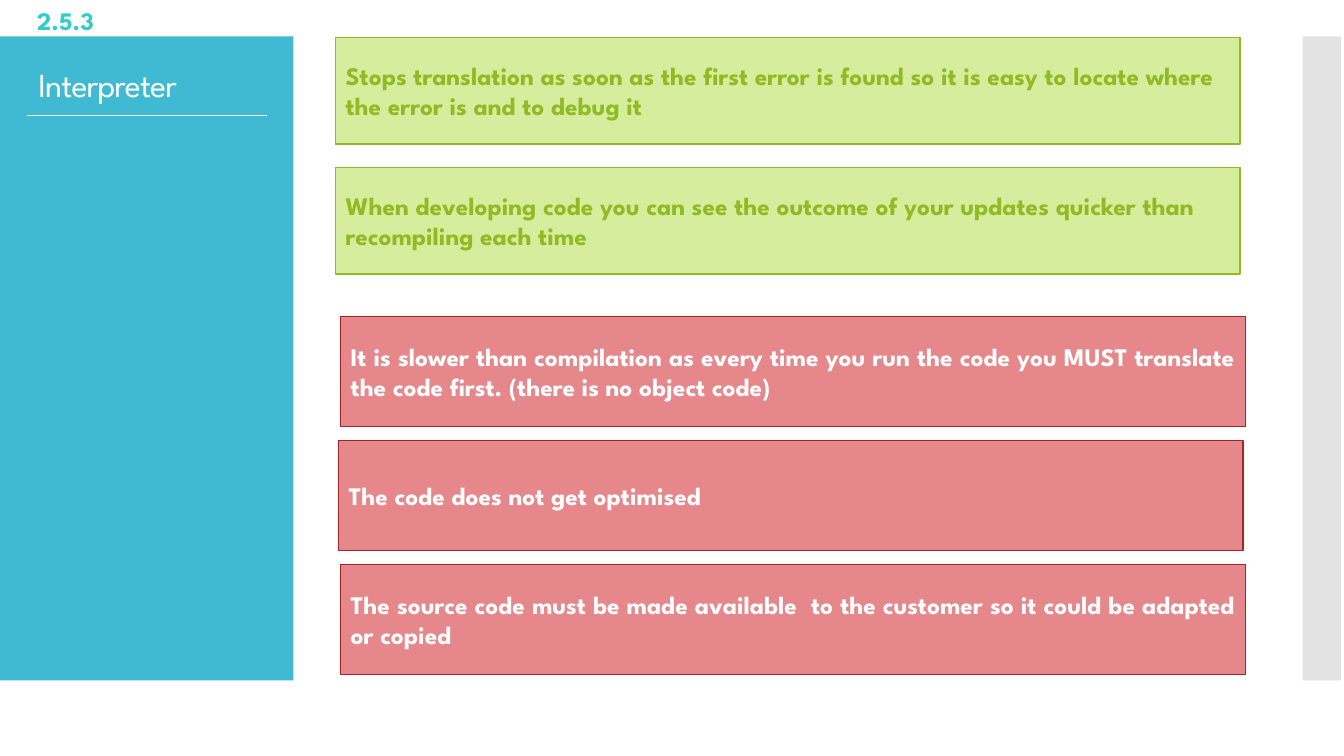
from dataclasses import dataclass

from lxml.etree import SubElement
from pptx import Presentation
from pptx.dml.color import RGBColor
from pptx.enum.shapes import MSO_CONNECTOR as Connector, MSO_SHAPE as Shape
from pptx.enum.text import MSO_ANCHOR as Anchor, MSO_AUTO_SIZE as AutoSize, PP_ALIGN as Align
from pptx.oxml.ns import qn
from pptx.util import Inches, Pt


@dataclass(frozen=True)
class Theme:
    font: str = "League Spartan"
    title_size: float = 24
    body_size: float = 18
    white: str = "FFFFFF"
    sidebar: str = "40BAD2"
    edge: str = "C8C8C8"
    number: str = "33CCCC"
    pro_fill: str = "D7ED9E"
    pro_line: str = "90BB23"
    con_fill: str = "E6888B"
    con_line: str = "A72327"


THEME = Theme()


def color(code):
    return RGBColor.from_string(code)


def write(frame, text, *, size=THEME.body_size, ink=THEME.white, bold=True,
          align=Align.LEFT, anchor=Anchor.TOP, after=0, leading=1.0, tracking=None):
    """Fill a text frame with one formatted paragraph."""
    frame.word_wrap = True
    frame.vertical_anchor = anchor
    para = frame.paragraphs[0]
    para.alignment = align
    para.space_after = Pt(after)
    para.line_spacing = leading
    span = para.add_run()
    span.text = text
    span.font.name = THEME.font
    span.font.size = Pt(size)
    span.font.bold = bold
    span.font.color.rgb = color(ink)
    if tracking is not None:
        span._r.get_or_add_rPr().set("spc", str(round(tracking * 100)))


class SlideBuilder:
    def __init__(self, page, theme):
        self.page = page
        self.theme = theme

    def rectangle(self, left, top, width, height, fill, line=None, opacity=None):
        box = self.page.shapes.add_shape(
            Shape.RECTANGLE, Inches(left), Inches(top), Inches(width), Inches(height))
        box.shadow.inherit = False
        box.fill.solid()
        box.fill.fore_color.rgb = color(fill)
        if opacity is not None:
            tint = box._element.spPr.find(qn("a:solidFill"))[0]
            SubElement(tint, qn("a:alpha")).set("val", str(opacity * 1000))
        if line:
            box.line.color.rgb = color(line)
            box.line.width = Pt(0.85)
        else:
            box.line.fill.background()
        return box

    def title(self, text, left, top, width, height):
        title = self.page.shapes.title
        title.left, title.top = Inches(left), Inches(top)
        title.width, title.height = Inches(width), Inches(height)
        title.text_frame.auto_size = AutoSize.NONE
        write(title.text_frame, text, size=self.theme.title_size, bold=False,
              leading=0.9, tracking=-0.6)
        # Bring the title in front of the sidebar
        self.page.shapes._spTree.append(title._element)

    def rule(self, left, right, y):
        rule = self.page.shapes.add_connector(
            Connector.STRAIGHT, Inches(left), Inches(y), Inches(right), Inches(y))
        rule.line.color.rgb = color(self.theme.white)
        rule.line.width = Pt(0.75)
        SubElement(rule._element.spPr, qn("a:effectLst"))

    def label(self, text, left, top, width, height):
        box = self.page.shapes.add_textbox(
            Inches(left), Inches(top), Inches(width), Inches(height))
        write(box.text_frame, text, ink=self.theme.number)
        box.text_frame.auto_size = AutoSize.SHAPE_TO_FIT_TEXT

    def pro(self, text, left, top):
        theme = self.theme
        box = self.rectangle(left, top, 8.97, 1.06, theme.pro_fill, theme.pro_line)
        write(box.text_frame, text, ink=theme.pro_line, anchor=Anchor.MIDDLE, after=24)

    def con(self, text, left, top):
        theme = self.theme
        box = self.rectangle(left, top, 8.97, 1.09, theme.con_fill, theme.con_line)
        write(box.text_frame, text, align=Align.JUSTIFY, anchor=Anchor.MIDDLE, after=18)


PROS = [
    "Stops translation as soon as the first error is found so it is easy to locate "
    "where the error is and to debug it",
    "When developing code you can see the outcome of your updates quicker than "
    "recompiling each time",
]
CONS = [
    (3.38, "It is slower than compilation as every time you run the code you MUST "
           "translate the code first. (there is no object code)"),
    (3.36, "The code does not get optimised"),
    (3.38, "The source code must be made available  to the customer so it could be "
           "adapted or copied"),
]


def main():
    deck = Presentation()
    deck.slide_width, deck.slide_height = Inches(13.33), Inches(7.5)
    page = deck.slides.add_slide(deck.slide_layouts[5])
    slide = SlideBuilder(page, THEME)

    # Side panels
    slide.rectangle(0, 0.36, 2.91, 6.39, THEME.sidebar)
    slide.rectangle(12.92, 0.36, 0.38, 6.39, THEME.edge, opacity=50)

    # Heading
    slide.title("Interpreter", 0.28, 0.63, 2.3, 5.64)
    slide.rule(0.27, 2.65, 1.15)
    slide.label("2.5.3", 0.27, 0, 2.27, 0.4)

    # Advantages, then drawbacks
    for row, text in enumerate(PROS):
        slide.pro(text, 3.33, 0.37 + row * 1.29)
    for row, (left, text) in enumerate(CONS):
        slide.con(text, left, 3.14 + row * 1.23)

    deck.save("out.pptx")


if __name__ == "__main__":
    main()
